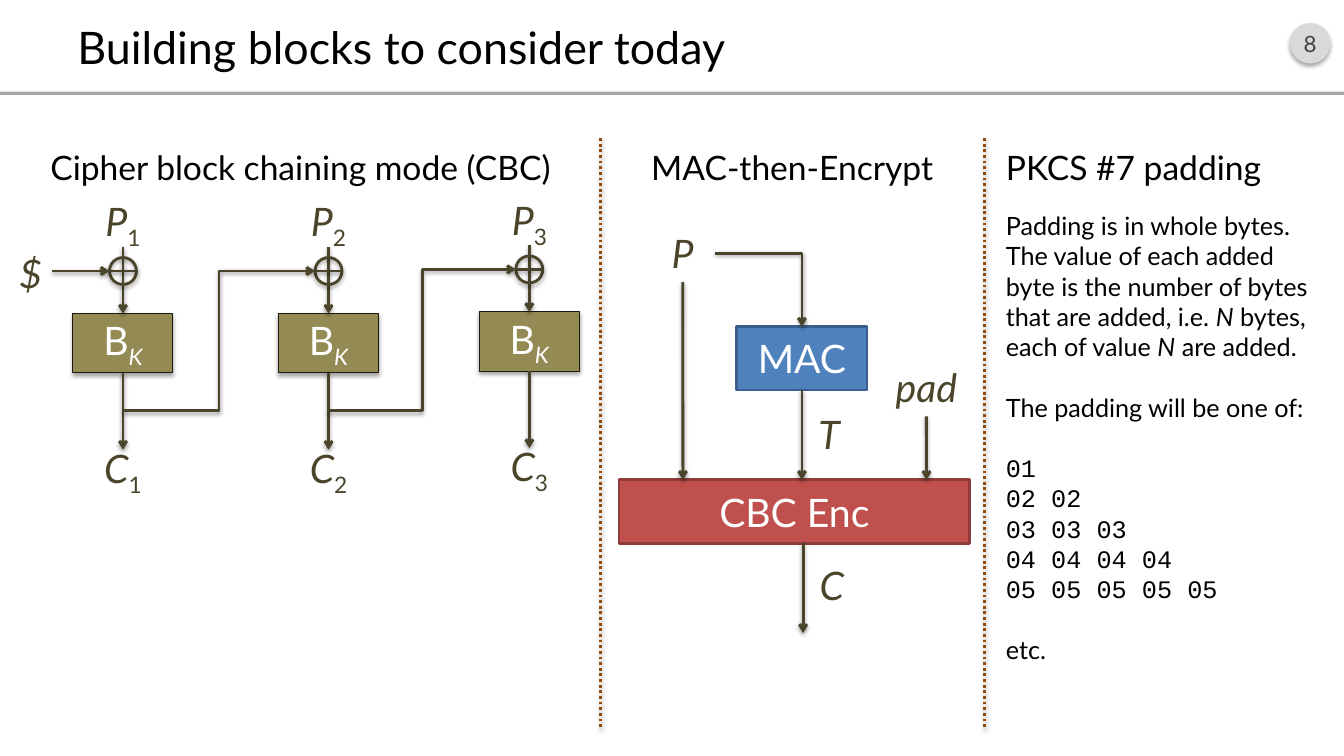
import pptx
import pptx.dml.color
import pptx.enum.dml
import pptx.enum.shapes
import pptx.enum.text
import pptx.oxml
import pptx.oxml.ns
import pptx.util

Cm = pptx.util.Cm
Pt = pptx.util.Pt
SHAPE = pptx.enum.shapes.MSO_SHAPE
CONNECTOR = pptx.enum.shapes.MSO_CONNECTOR
ALIGN = pptx.enum.text.PP_ALIGN
ANCHOR = pptx.enum.text.MSO_ANCHOR

COLORS = {
    "black": "000000", "white": "FFFFFF", "badge": "D9D9D9", "number": "404040",
    "rule": "A6A6A6", "ink": "4A452A", "cipher": "948A54", "cipher_edge": "1E1C11",
    "mac": "4F81BD", "mac_edge": "3A5F8C", "encrypt": "C0504D", "encrypt_edge": "8E3B39",
    "divider": "984807",
}
TITLE = "Building blocks to consider today"
HEADINGS = [
    ("Cipher block chaining mode (CBC)", 1.02, 13.92, ALIGN.LEFT),
    ("MAC-then-Encrypt", 15.8, 8.33, ALIGN.CENTER),
    ("PKCS #7 padding", 25.1, 8.28, ALIGN.LEFT),
]
STAGES = [("1", 3.1, 0), ("2", 8.28, 0), ("3", 13.34, -0.04)]
DIVIDERS = [15.14, 24.82]
PADDING_INTRO = [
    ("Padding is in whole bytes. The value of each added byte is the number of bytes "
     "that are added, i.e. ", ""),
    ("N", "i"), (" bytes, each of value ", ""), ("N", "i"), (" are added.", ""),
]
PADDING_LEAD = "The padding will be one of:"
PADDING_ROWS = 5
PADDING_END = "etc."

BOX_WIDTH, BOX_HEIGHT, BOX_TOP = 2.52, 1.5, 7.9
RADIUS, XOR_Y = 0.34, 6.83
PLAIN_TOP, ARROW_TOP = 4.86, 6.22
BRANCH_Y, ARROW_BOTTOM, CIPHER_TOP = 10.34, 11.33, 11.07
LABEL_WIDTH, LABEL_HEIGHT = 1.65, 1.45

presentation = pptx.Presentation()
presentation.slide_width = Cm(33.87)
presentation.slide_height = Cm(19.05)
slide = presentation.slides.add_slide(presentation.slide_layouts[6])


def rgb(name):
    return pptx.dml.color.RGBColor.from_string(COLORS[name])


def add_shadow(effects, alpha, distance):
    effects.append(pptx.oxml.parse_xml(
        f'<a:outerShdw {pptx.oxml.ns.nsdecls("a")} blurRad="{Pt(3.1)}" dist="{Pt(distance)}" '
        f'dir="5400000" rotWithShape="0"><a:srgbClr val="{COLORS["black"]}">'
        f'<a:alpha val="{alpha * 1000}"/></a:srgbClr></a:outerShdw>'))


def add_paragraph(frame, runs, size, color, align=ALIGN.LEFT, font="Lato", before=0):
    paragraph = frame.paragraphs[0]
    if paragraph.runs:
        paragraph = frame.add_paragraph()
    paragraph.alignment = align
    paragraph.space_before = Pt(before)
    for text, style in runs:
        run = paragraph.add_run()
        run.text = text
        run.font.name = font
        run.font.size = Pt(size)
        run.font.italic = "i" in style
        run.font.color.rgb = rgb(color)
        if "s" in style:
            run.font._element.set("baseline", "-25000")


def add_frame(left, top, width, height, anchor=ANCHOR.TOP):
    box = slide.shapes.add_textbox(Cm(left), Cm(top), Cm(width), Cm(height))
    box.text_frame.word_wrap = True
    box.text_frame.vertical_anchor = anchor
    return box


def add_label(runs, left, top, width=LABEL_WIDTH, height=LABEL_HEIGHT):
    label = add_frame(left, top, width, height)
    label.text_frame.margin_left = label.text_frame.margin_right = 0
    add_paragraph(label.text_frame, runs, 28, "ink", ALIGN.CENTER)
    return label


def add_block(kind, left, top, width, height, fill=None, edge=None, weight=2, shadow=False):
    shape = slide.shapes.add_shape(kind, Cm(left), Cm(top), Cm(width), Cm(height))
    if fill:
        shape.fill.solid()
        shape.fill.fore_color.rgb = rgb(fill)
    else:
        shape.fill.background()
    if edge:
        shape.line.color.rgb = rgb(edge)
        shape.line.width = Pt(weight)
    else:
        shape.line.fill.background()
    shape.shadow.inherit = False
    if shadow:
        add_shadow(shape.element.spPr.find(pptx.oxml.ns.qn("a:effectLst")), 35, 1.8)
    shape.text_frame.vertical_anchor = ANCHOR.MIDDLE
    return shape


def add_line(start, end, color="ink", kind=CONNECTOR.STRAIGHT, arrow=True, dash=None):
    line = slide.shapes.add_connector(kind, *map(Cm, start + end))
    line.line.color.rgb = rgb(color)
    line.line.width = Pt(2)
    if dash:
        line.line.dash_style = dash
    properties = line.element.spPr
    if arrow:
        properties.find(pptx.oxml.ns.qn("a:ln")).append(pptx.oxml.parse_xml(
            f'<a:tailEnd {pptx.oxml.ns.nsdecls("a")} type="arrow"/>'))
    effects = pptx.oxml.parse_xml(f'<a:effectLst {pptx.oxml.ns.nsdecls("a")}/>')
    properties.append(effects)
    add_shadow(effects, 38, 1.6)
    return line


def add_stage(number, center, shift):
    left = center - BOX_WIDTH / 2
    box = add_block(SHAPE.RECTANGLE, left, BOX_TOP + shift, BOX_WIDTH, BOX_HEIGHT,
                    "cipher", "cipher_edge", 0.75, True)
    add_paragraph(box.text_frame, [("B", ""), ("K", "is")], 28, "white", ALIGN.CENTER)
    box_bottom = BOX_TOP + BOX_HEIGHT + shift
    add_line((center, ARROW_TOP + shift), (center, BOX_TOP + shift)).end_connect(box, 0)
    add_line((center, box_bottom), (center, ARROW_BOTTOM + shift)).begin_connect(box, 2)
    for letter, top in (("P", PLAIN_TOP), ("C", CIPHER_TOP)):
        add_label([(letter, "i"), (number, "s")], center - LABEL_WIDTH / 2, top + shift)
    xor_y = XOR_Y + shift
    add_block(SHAPE.OVAL, center - RADIUS, xor_y - RADIUS, 2 * RADIUS, 2 * RADIUS,
              edge="ink", shadow=True)
    add_line((center - RADIUS, xor_y), (center + RADIUS, xor_y), arrow=False)


badge = add_block(SHAPE.OVAL, 32.51, 0.58, 1.02, 1.02, "badge", shadow=True)
badge.text_frame.margin_left = badge.text_frame.margin_right = 0
add_paragraph(badge.text_frame, [("8", "")], 16, "number", ALIGN.CENTER)
add_block(SHAPE.RECTANGLE, 0, 2.31, 33.87, 0.08, "rule")
title = add_frame(1.7, 0.41, 30.48, 1.52, ANCHOR.MIDDLE)
add_paragraph(title.text_frame, [(TITLE, "")], 32, "black")
for text, left, width, align in HEADINGS:
    heading = add_frame(left, 3.07, width, 1.78, ANCHOR.BOTTOM)
    add_paragraph(heading.text_frame, [(text, "")], 24, "black", align)

for stage in STAGES:
    add_stage(*stage)
add_label([("$", "i")], 0.23, 6.15, 1.09)
add_line((1.32, XOR_Y), (STAGES[0][1] - RADIUS, XOR_Y))
for (_, center, _), (_, following, shift) in zip(STAGES, STAGES[1:]):
    add_line((center, BRANCH_Y), (following - RADIUS, XOR_Y + shift), kind=CONNECTOR.ELBOW)

plaintext = add_label([("P", "i")], 16.38, 5.66)
mac = add_block(SHAPE.RECTANGLE, 18.57, 8.23, 3.28, 1.6, "mac", "mac_edge")
add_paragraph(mac.text_frame, [("MAC", "")], 28, "white", ALIGN.CENTER)
encrypt = add_block(SHAPE.RECTANGLE, 15.6, 12.09, 8.84, 1.6, "encrypt", "encrypt_edge")
add_paragraph(encrypt.text_frame, [("CBC Enc", "")], 28, "white", ALIGN.CENTER)
pad = add_label([("pad", "i")], 22.28, 9.04, 2.13)
add_label([("T", "i")], 20.07, 10.21)
add_label([("C", "i")], 20.14, 14.02)

corner = add_line((18.03, 6.38), (20.21, 8.23), kind=CONNECTOR.ELBOW)
corner.element.spPr.find(pptx.oxml.ns.qn("a:prstGeom")).set("prst", "bentConnector2")
corner.begin_connect(plaintext, 3)
corner.end_connect(mac, 0)
for source, center, bottom in ((plaintext, 17.21, 7.11), (mac, 20.21, 9.83), (pad, 23.35, 10.49)):
    add_line((center, bottom), (center, 12.09)).begin_connect(source, 2)
add_line((20.24, 13.69), (20.24, 15.95))

for x in DIVIDERS:
    add_line((x, 3.48), (x, 18.36), "divider", arrow=False,
             dash=pptx.enum.dml.MSO_LINE.ROUND_DOT)

padding = add_frame(25.1, 5.18, 8.28, 11.79).text_frame
add_paragraph(padding, PADDING_INTRO, 18, "black")
add_paragraph(padding, [(PADDING_LEAD, "")], 18, "black", before=21.6)
for count in range(1, PADDING_ROWS + 1):
    row = " ".join([f"{count:02d}"] * count)
    add_paragraph(padding, [(row, "")], 18, "black", font="Courier New",
                  before=21.6 if count == 1 else 0)
add_paragraph(padding, [(PADDING_END, "")], 18, "black", before=21.6)

presentation.save("out.pptx")
